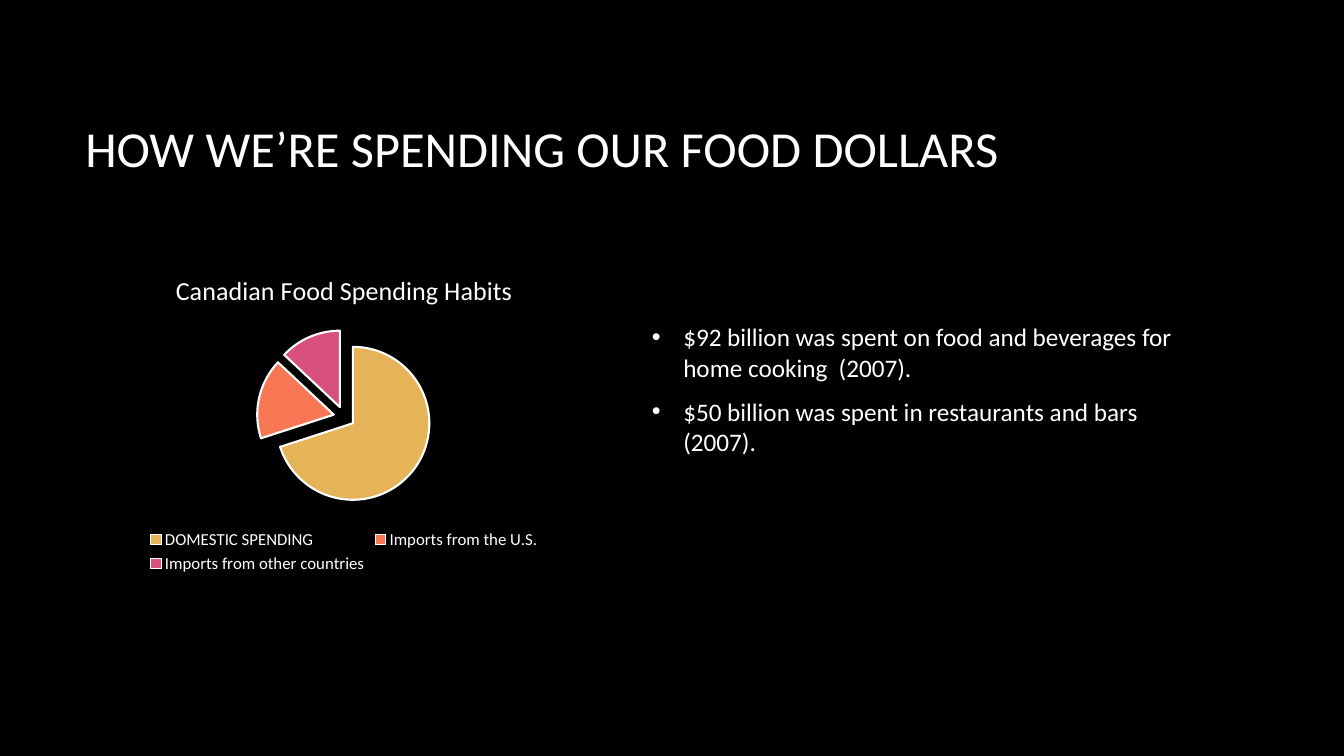
from lxml import etree
from pptx import Presentation
from pptx.chart.data import CategoryChartData
from pptx.dml.color import RGBColor
from pptx.enum import chart as ch, text as tx
from pptx.oxml.ns import qn
from pptx.util import Cm, Pt

BLACK = RGBColor(0x00, 0x00, 0x00)
WHITE = RGBColor(0xFF, 0xFF, 0xFF)
GOLD = RGBColor(0xE5, 0xB4, 0x58)
ORANGE = RGBColor(0xF7, 0x77, 0x54)
PINK = RGBColor(0xD8, 0x50, 0x7E)
FONT = "Calibri"


def style(font, size):
    font.name, font.size, font.bold = FONT, Pt(size), False
    font.color.rgb = WHITE


def add_text(paragraphs, box, size, anchor=tx.MSO_ANCHOR.TOP, bullet=None, after=0):
    frame = slide.shapes.add_textbox(*box).text_frame
    frame.word_wrap = True
    frame.vertical_anchor = anchor
    for number, words in enumerate(paragraphs):
        paragraph = frame.add_paragraph() if number else frame.paragraphs[0]
        paragraph.text = words
        paragraph.space_after = Pt(after)
        if bullet:
            properties = paragraph._p.get_or_add_pPr()
            properties.set("marL", str(Cm(0.79)))
            properties.set("indent", str(-Cm(0.79)))
            color = etree.SubElement(properties, qn("a:buClr"))
            etree.SubElement(color, qn("a:srgbClr"), val=str(WHITE))
            etree.SubElement(properties, qn("a:buFont"), typeface="Arial")
            etree.SubElement(properties, qn("a:buChar"), char=bullet)
        style(paragraph.font, size)


deck = Presentation()
deck.slide_width, deck.slide_height = Cm(33.87), Cm(19.05)
slide = deck.slides.add_slide(deck.slide_layouts[6])
slide.background.fill.solid()
slide.background.fill.fore_color.rgb = BLACK

add_text(["HOW WE’RE SPENDING OUR FOOD DOLLARS"],
         (Cm(1.9), Cm(1.7), Cm(28.15), Cm(4.04)), 36, anchor=tx.MSO_ANCHOR.MIDDLE)

# Spending by origin, in percent
spending = [
    ("DOMESTIC SPENDING", 70, GOLD),
    ("Imports from the U.S.", 17, ORANGE),
    ("Imports from other countries", 13, PINK),
]
habits = "Canadian Food Spending Habits"
data = CategoryChartData()
data.categories = [origin for origin, _, _ in spending]
data.add_series(habits, [share for _, share, _ in spending])
pie = slide.shapes.add_chart(ch.XL_CHART_TYPE.PIE, Cm(1.73), Cm(6.45),
                             Cm(13.89), Cm(8.1), data).chart
style(pie.font, 10)

pie.has_title = True
pie.chart_title.include_in_layout = False
heading = pie.chart_title.text_frame
heading.text = habits
style(heading.paragraphs[0].runs[0].font, 18.6)

pie.has_legend = True
pie.legend.position = ch.XL_LEGEND_POSITION.BOTTOM
pie.legend.include_in_layout = False
style(pie.legend.font, 12)

pie.plots[0].vary_by_categories = True
shares = pie.plots[0].series[0]
shares.format.line.color.rgb = WHITE
explosion = etree.Element(qn("c:explosion"), val="14")
shares._element.find(qn("c:spPr")).addnext(explosion)
for number, (_, _, color) in enumerate(spending):
    wedge = shares.points[number].format
    wedge.fill.solid()
    wedge.fill.fore_color.rgb = color
    wedge.line.color.rgb = WHITE
    wedge.line.width = Pt(1.5)

add_text(["$92 billion was spent on food and beverages for home cooking  (2007).",
          "$50 billion was spent in restaurants and bars  (2007)."],
         (Cm(16.18), Cm(7.98), Cm(13.87), Cm(8.1)), 18, bullet="•", after=10)

deck.save("out.pptx")
